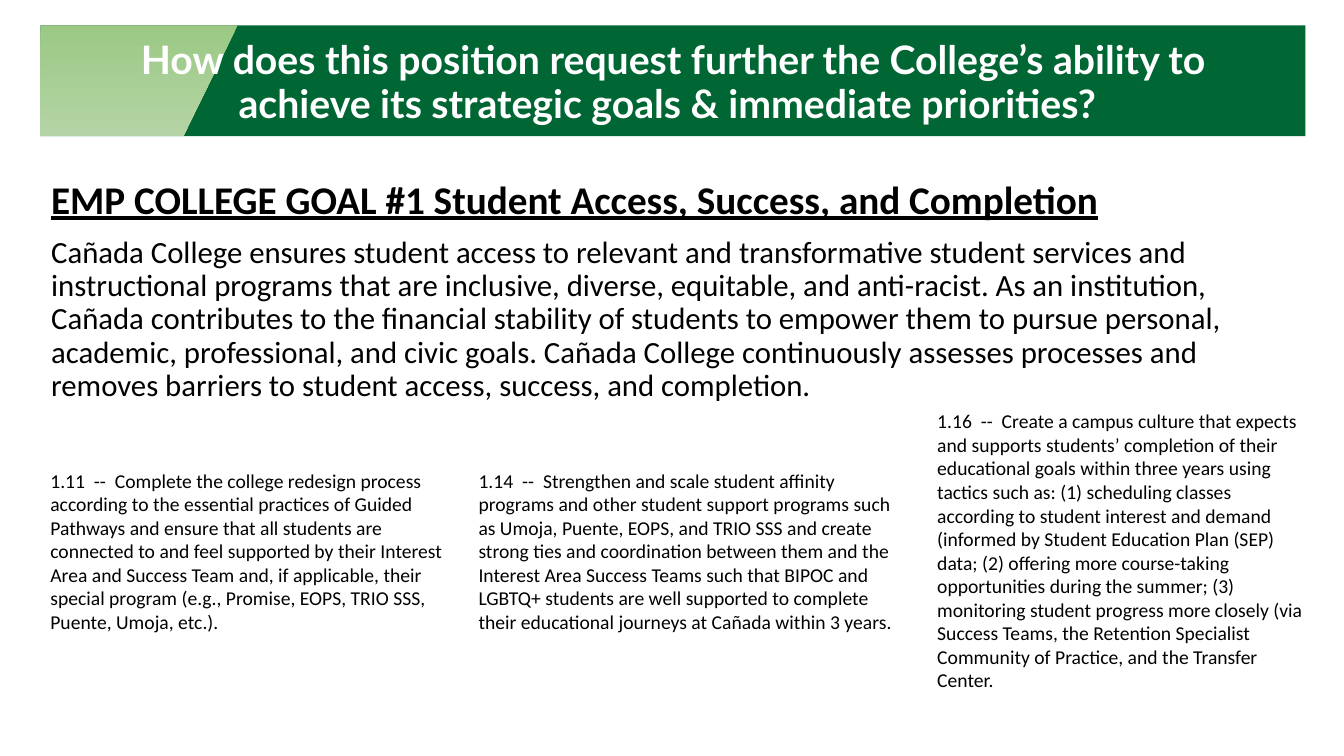
from pptx import Presentation
from pptx.dml.color import RGBColor
from pptx.enum.shapes import MSO_SHAPE as Shape
from pptx.enum.text import MSO_ANCHOR as Anchor, PP_ALIGN as Align
from pptx.util import Cm, Pt

BLACK = RGBColor(0x00, 0x00, 0x00)
WHITE = RGBColor(0xFF, 0xFF, 0xFF)
GREEN = RGBColor(0x00, 0x66, 0x33)
LEAF = RGBColor(0x9B, 0xC9, 0x85)
PALE = RGBColor(0xB4, 0xD4, 0xA5)

BAND = (1.02, 0.64, 31.88, 2.79)

TITLE = ("How does this position request further the College’s ability to "
         "achieve its strategic goals & immediate priorities?")
HEAD = "EMP COLLEGE GOAL #1 Student Access, Success, and Completion"
BODY = (
    "Cañada College ensures student access to relevant and transformative "
    "student services and instructional programs that are inclusive, diverse, "
    "equitable, and anti-racist. As an institution, Cañada contributes to the "
    "financial stability of students to empower them to pursue personal, "
    "academic, professional, and civic goals. Cañada College continuously "
    "assesses processes and removes barriers to student access, success, and "
    "completion.")

# Each goal: left, top, width, height in cm, then its text
GOALS = [
    (1.02, 11.68, 11.02, 4.45,
     "1.11  --  Complete the college redesign process according to the "
     "essential practices of Guided Pathways and ensure that all students are "
     "connected to and feel supported by their Interest Area and Success Team "
     "and, if applicable, their special program (e.g., Promise, EOPS, TRIO "
     "SSS, Puente, Umoja, etc.)."),
    (11.81, 11.68, 11.02, 4.45,
     "1.14  --  Strengthen and scale student affinity programs and other "
     "student support programs such as Umoja, Puente, EOPS, and TRIO SSS and "
     "create strong ties and coordination between them and the Interest Area "
     "Success Teams such that BIPOC and LGBTQ+ students are well supported to "
     "complete their educational journeys at Cañada within 3 years."),
    (23.37, 10.19, 9.73, 7.44,
     "1.16  --  Create a campus culture that expects and supports students’ "
     "completion of their educational goals within three years using tactics "
     "such as: (1) scheduling classes according to student interest and demand "
     "(informed by Student Education Plan (SEP) data; (2) offering more "
     "course-taking opportunities during the summer; (3) monitoring student "
     "progress more closely (via Success Teams, the Retention Specialist "
     "Community of Practice, and the Transfer Center."),
]


def add_box(slide, *place):
    frame = slide.shapes.add_textbox(*map(Cm, place)).text_frame
    frame.word_wrap = True
    return frame


def set_font(para, size, color=BLACK, name="Calibri", bold=False):
    font = para.font
    font.name, font.size, font.bold = name, Pt(size), bold
    font.color.rgb = color


def add_band(slide):
    left, top, width, height = BAND
    bar = slide.shapes.add_shape(Shape.RECTANGLE, *map(Cm, BAND))
    bar.shadow.inherit = False
    bar.fill.solid()
    bar.fill.fore_color.rgb = GREEN
    bar.line.fill.background()

    # Slanted light corner
    base = top + height
    pen = slide.shapes.build_freeform(Cm(left), Cm(top))
    pen.add_line_segments([(Cm(x), Cm(y)) for x, y in
                           [(5.99, top), (4.62, base), (left, base)]])
    wedge = pen.convert_to_shape()
    wedge.shadow.inherit = False
    wedge.line.fill.background()
    wedge.fill.gradient()
    wedge.fill.gradient_angle = 270
    for stop, color in zip(wedge.fill.gradient_stops, (LEAF, PALE)):
        stop.color.rgb = color


def add_title(slide):
    frame = add_box(slide, 1.5, 1.04, 30.63, 1.96)
    frame.vertical_anchor = Anchor.MIDDLE
    para = frame.paragraphs[0]
    para.alignment = Align.CENTER
    para.line_spacing = 0.9
    set_font(para, 28, WHITE, "Lato", True)
    para.add_run().text = " "
    para.runs[0].font.size = Pt(34)
    para.add_run().text = TITLE


def add_body(slide):
    frame = add_box(slide, 1.04, 4.42, 31.62, 6.32)
    head, body = frame.paragraphs[0], frame.add_paragraph()
    head.text, body.text = HEAD, BODY
    head.line_spacing = body.line_spacing = 0.9
    set_font(head, 28, bold=True)
    head.font.underline = True
    set_font(body, 22)
    body.space_before = Pt(10)


def add_goal(slide, left, top, width, height, text):
    para = add_box(slide, left, top, width, height).paragraphs[0]
    para.text = text
    set_font(para, 14)


def main():
    deck = Presentation()
    deck.slide_width, deck.slide_height = Cm(33.87), Cm(19.05)
    slide = deck.slides.add_slide(deck.slide_layouts[6])

    # Title band
    add_band(slide)
    add_title(slide)

    # Goal statement and its three objectives
    add_body(slide)
    for goal in GOALS:
        add_goal(slide, *goal)

    deck.save("out.pptx")


if __name__ == "__main__":
    main()
